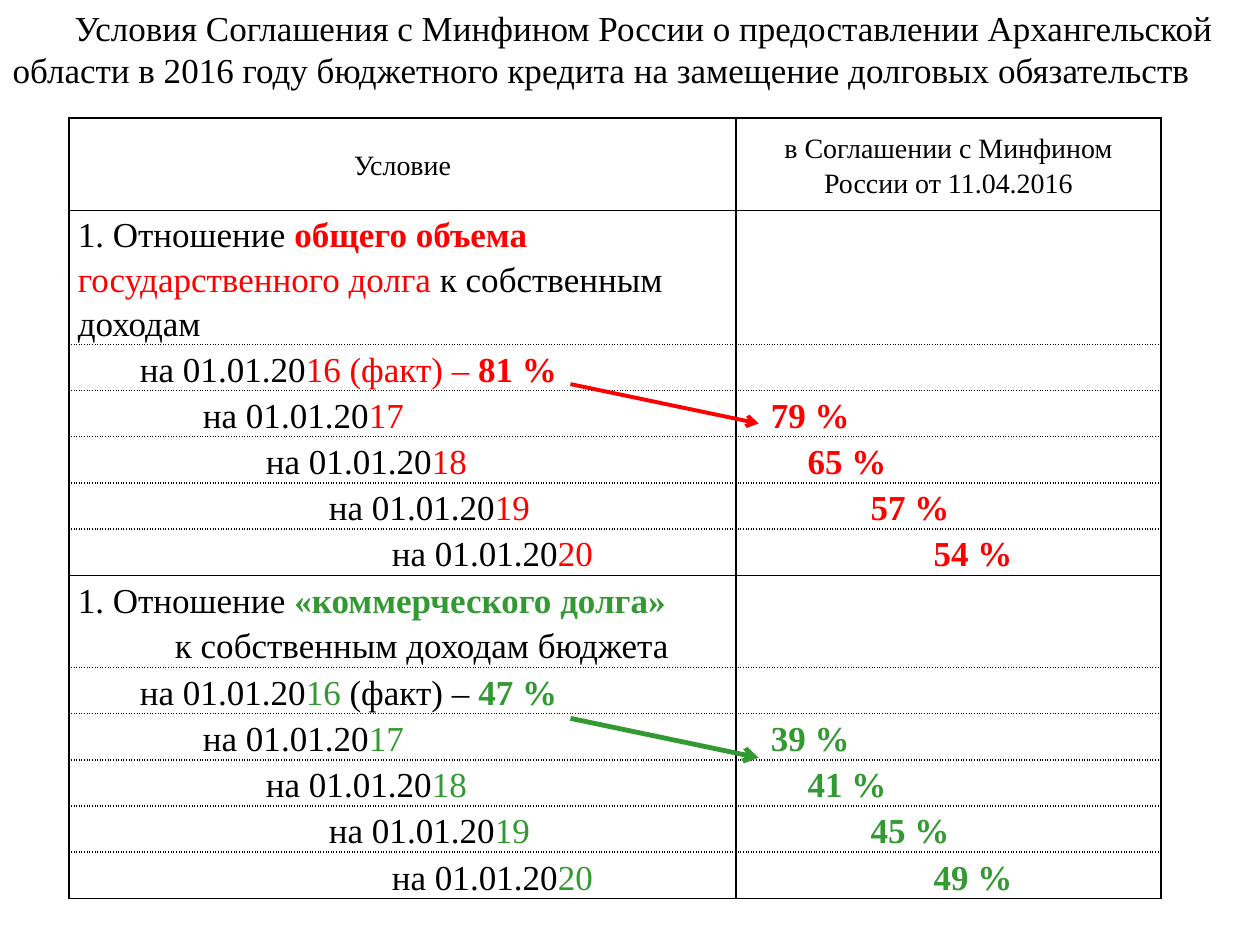
from dataclasses import dataclass

from lxml.etree import SubElement
from pptx import Presentation
from pptx.dml.color import RGBColor
from pptx.enum.shapes import MSO_CONNECTOR
from pptx.enum.text import MSO_ANCHOR, MSO_AUTO_SIZE, PP_ALIGN
from pptx.oxml.ns import qn
from pptx.util import Pt


@dataclass(frozen=True)
class Theme:
    """Colours, font and type sizes of the slide."""
    font: str = "Times New Roman"
    black: str = "000000"
    red: str = "FF0000"
    green: str = "339933"
    body: int = 20
    header: int = 16
    leading: float = 1.27


THEME = Theme()
HEADER_H, ROW_H = 52.7, 26.4
STEP = 36
YEARS = ("17", "18", "19", "20")
VALUE_INDENTS = (15, 36, 72, 108)
CELL_FORMAT = {"margin_left": Pt(5), "margin_right": Pt(5), "margin_top": 0,
               "margin_bottom": 0, "vertical_anchor": MSO_ANCHOR.MIDDLE}


def apply(obj, values):
    """Set each attribute named in the dict."""
    for name, value in values.items():
        setattr(obj, name, value)


def write(p, runs, size=THEME.body, left=0, first=0, level=0, **fmt):
    """Fill a paragraph with (text, colour, bold) runs."""
    apply(p, {"level": level, **fmt})
    pPr = p._p.get_or_add_pPr()
    pPr.set("marL", str(Pt(left)))
    pPr.set("indent", str(Pt(first)))
    for text, color, bold in runs:
        r = p.add_run()
        r.text = text
        apply(r.font, {"name": THEME.font, "size": Pt(size), "bold": bold})
        r.font.color.rgb = RGBColor.from_string(color)


def add_title(slide, x, y, w, h):
    """Place the slide title in its box."""
    sp = slide.shapes.title
    apply(sp, {"left": Pt(x), "top": Pt(y), "width": Pt(w), "height": Pt(h)})
    tf = sp.text_frame
    apply(tf, {"word_wrap": True, "vertical_anchor": MSO_ANCHOR.MIDDLE,
               "auto_size": MSO_AUTO_SIZE.SHAPE_TO_FIT_TEXT})
    text = ("Условия Соглашения с Минфином России о предоставлении Архангельской "
            "области в 2016 году бюджетного кредита на замещение долговых обязательств")
    write(tf.paragraphs[0], [(text, THEME.black, False)], first=35.5,
          alignment=PP_ALIGN.LEFT)


def set_borders(cell, top, bottom):
    """Draw the four cell edges with the given dashes above and below."""
    tcPr = cell._tc.get_or_add_tcPr()
    for edge, dash in (("L", "solid"), ("R", "solid"), ("T", top), ("B", bottom)):
        ln = SubElement(tcPr, qn(f"a:ln{edge}"), w=str(Pt(1)))
        fill = SubElement(ln, qn("a:solidFill"))
        SubElement(fill, qn("a:srgbClr"), val=THEME.black)
        SubElement(ln, qn("a:prstDash"), val=dash)


def fill_cell(cell, paragraphs, size=THEME.body, align=PP_ALIGN.LEFT):
    """Write (runs, left indent, level) paragraphs into a cell."""
    tf = cell.text_frame
    for i, (runs, left, level) in enumerate(paragraphs):
        p = tf.add_paragraph() if i else tf.paragraphs[0]
        write(p, runs, size, left, level=level, alignment=align,
              line_spacing=Pt(size * THEME.leading), space_before=Pt(0),
              space_after=Pt(0))


def fill_section(table, top, heading, fact, values, color):
    """Write one condition: heading, actual figure and yearly limits."""
    date = ("на 01.01.20", THEME.black, False)
    fill_cell(table.cell(top, 0), heading)
    fill_cell(table.cell(top + 1, 0), [([date, *fact], STEP - 0.5, 0)])
    for i, (year, value, indent) in enumerate(zip(YEARS, values, VALUE_INDENTS)):
        row = top + 2 + i
        fill_cell(table.cell(row, 0),
                  [([date, (year, color, False)], STEP * (i + 2) - 0.5, i + 1)])
        fill_cell(table.cell(row, 1), [([(f"{value} %", color, True)], indent, i)])


def add_conditions(slide, x, y, w, h):
    """Place the table of agreement conditions in its box."""
    black, red, green = THEME.black, THEME.red, THEME.green
    heights = [HEADER_H, 76.6] + [ROW_H] * 5 + [HEADER_H] + [ROW_H] * 5
    table = slide.shapes.add_table(len(heights), 2, Pt(x), Pt(y), Pt(w), Pt(h)).table
    apply(table, {"first_row": False, "horz_banding": False})
    table.columns[0].width, table.columns[1].width = Pt(381), Pt(w - 381)
    solid = {0, 1, 7, len(heights)}
    for i, height in enumerate(heights):
        table.rows[i].height = Pt(height)
        top, bottom = ("solid" if n in solid else "sysDot" for n in (i, i + 1))
        for cell in table.rows[i].cells:
            apply(cell, CELL_FORMAT)
            set_borders(cell, top, bottom)
            cell.fill.background()
    for col, text in enumerate(("Условие", "в Соглашении с Минфином России от 11.04.2016")):
        fill_cell(table.cell(0, col), [([(text, black, False)], 0, 0)],
                  THEME.header, PP_ALIGN.CENTER)
    start = ("1. Отношение ", black, False)
    fill_section(table, 1,
                 [([start, ("общего объема", red, True),
                    (" государственного долга", red, False),
                    (" к собственным доходам", black, False)], 0, 0)],
                 [("16 (факт) – ", red, False), ("81 %", red, True)],
                 (79, 65, 57, 54), red)
    fill_section(table, 7,
                 [([start, ("«коммерческого долга»", green, True)], 0, 0),
                  ([("к собственным доходам бюджета", black, False)], 55.5, 0)],
                 [("16", green, False), (" (факт) – ", black, False),
                  ("47 %", green, True)],
                 (39, 41, 45, 49), green)


def add_arrow(slide, x, y, w, h, color, weight):
    """Draw an arrow across its box, from top left to bottom right."""
    cn = slide.shapes.add_connector(MSO_CONNECTOR.STRAIGHT,
                                    Pt(x), Pt(y), Pt(x + w), Pt(y + h))
    cn.line.color.rgb = RGBColor.from_string(color)
    cn.line.width = Pt(weight)
    SubElement(cn.line._get_or_add_ln(), qn("a:tailEnd"), type="arrow")
    SubElement(cn._element.spPr, qn("a:effectLst"))


def main():
    """Build the slide and save it."""
    prs = Presentation()
    apply(prs, {"slide_width": Pt(720), "slide_height": Pt(540)})
    s = prs.slides.add_slide(prs.slide_layouts[5])
    add_title(s, 0, 0, 703.5, 55.5)
    add_conditions(s, 39.5, 67.5, 624, 446)
    add_arrow(s, 326, 219.5, 107.5, 22.5, THEME.red, 2.25)
    add_arrow(s, 326, 410.5, 107.5, 22.5, THEME.green, 2.75)
    prs.save("out.pptx")


if __name__ == "__main__":
    main()
